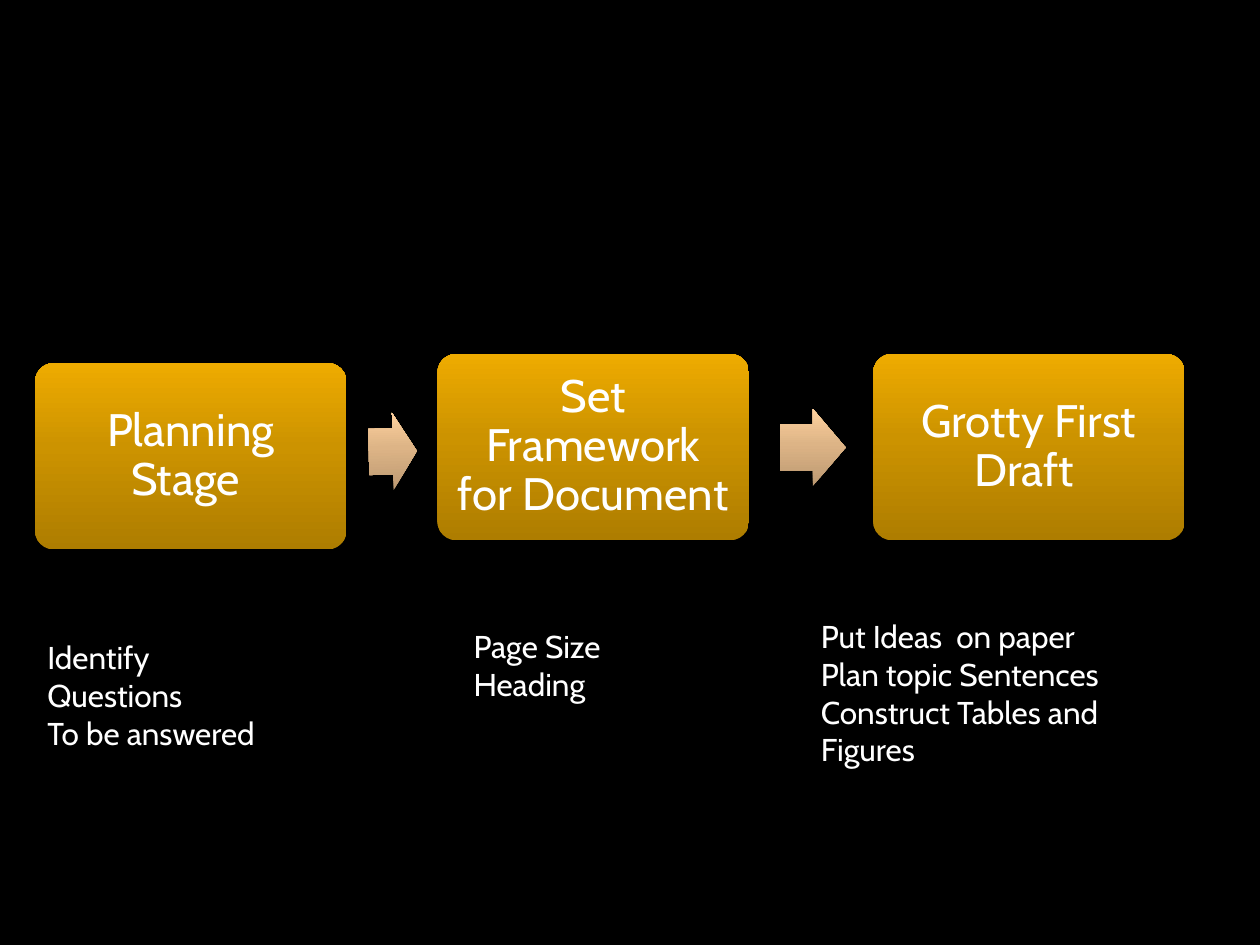
from copy import deepcopy
from dataclasses import dataclass

from pptx import Presentation
from pptx.dml.color import RGBColor
from pptx.enum.shapes import MSO_SHAPE
from pptx.enum.text import MSO_ANCHOR, PP_ALIGN
from pptx.util import Pt

CARD = MSO_SHAPE.ROUNDED_RECTANGLE
ARROW = MSO_SHAPE.RIGHT_ARROW
MIDDLE = MSO_ANCHOR.MIDDLE
CENTER, LEFT = PP_ALIGN.CENTER, PP_ALIGN.LEFT


@dataclass(frozen=True)
class Theme:
    font: str = "Cabin"
    back: str = "000000"
    ink: str = "FFFFFF"
    gold: tuple = ("AE7D00", "CC9300", "EEAB00")
    sand: tuple = ("BC9972", "DDB486", "FFD29F")
    stops: tuple = (0, 0.55, 1)
    head: int = 26
    body: int = 18


THEME = Theme()
CARD_W, CARD_H = 178, 106.5
ARROW_H = 44

# Card left, top and label; note box and lines
STAGES = [
    ((20, 207.5), "Planning Stage ",
     (20, 361, 152, 51), ["Identify Questions", "To be answered"]),
    ((250, 202.25), "Set Framework for Document ",
     (263.5, 355, 87, 51), ["Page Size", "Heading"]),
    ((499, 202.25), "Grotty First Draft ",
     (462, 349, 229, 73),
     ["Put Ideas  on paper", "Plan topic Sentences",
      "Construct Tables and Figures"]),
]

# Arrow left, top, width and turn
ARROWS = [(210.75, 236, 27.5, 358.7), (445.75, 233.75, 37.5, 0)]


def shade(shape, tones):
    """Fill from the bottom up through three tones."""
    fill = shape.fill
    fill.gradient()
    fill.gradient_angle = 90
    last = fill.gradient_stops[1]._gs
    last.addnext(deepcopy(last))
    for stop, tone, pos in zip(fill.gradient_stops, tones, THEME.stops):
        stop.color.rgb = RGBColor.from_string(tone)
        stop.position = pos


def add_form(slide, kind, box, tones):
    shape = slide.shapes.add_shape(kind, *map(Pt, box))
    shape.shadow.inherit = False
    shape.line.fill.background()
    shade(shape, tones)
    return shape


def write(frame, lines, size, align):
    frame.word_wrap = True
    for i, line in enumerate(lines):
        para = frame.paragraphs[0] if i == 0 else frame.add_paragraph()
        para.alignment = align
        run = para.add_run()
        run.text = line
        run.font.name = THEME.font
        run.font.size = Pt(size)
        run.font.color.rgb = RGBColor.from_string(THEME.ink)


def add_card(slide, left, top, label):
    card = add_form(slide, CARD, (left, top, CARD_W, CARD_H), THEME.gold)
    card.adjustments[0] = 0.1
    frame = card.text_frame
    frame.margin_left = frame.margin_right = Pt(7.5)
    frame.margin_top = frame.margin_bottom = Pt(7.5)
    frame.vertical_anchor = MIDDLE
    write(frame, [label], THEME.head, CENTER)
    frame.paragraphs[0].line_spacing = 0.9


def add_arrow(slide, left, top, width, turn):
    arrow = add_form(slide, ARROW, (left, top, width, ARROW_H), THEME.sand)
    arrow.adjustments[0] = 0.6
    arrow.adjustments[1] = 0.5
    arrow.rotation = turn


def add_note(slide, box, lines):
    note = slide.shapes.add_textbox(*map(Pt, box))
    write(note.text_frame, lines, THEME.body, LEFT)


def main():
    deck = Presentation()
    deck.slide_width, deck.slide_height = Pt(720), Pt(540)
    slide = deck.slides.add_slide(deck.slide_layouts[6])
    back = slide.background.fill
    back.solid()
    back.fore_color.rgb = RGBColor.from_string(THEME.back)
    for spot, label, box, lines in STAGES:
        add_card(slide, *spot, label)
        add_note(slide, box, lines)
    for arrow in ARROWS:
        add_arrow(slide, *arrow)
    deck.save("out.pptx")


if __name__ == "__main__":
    main()
